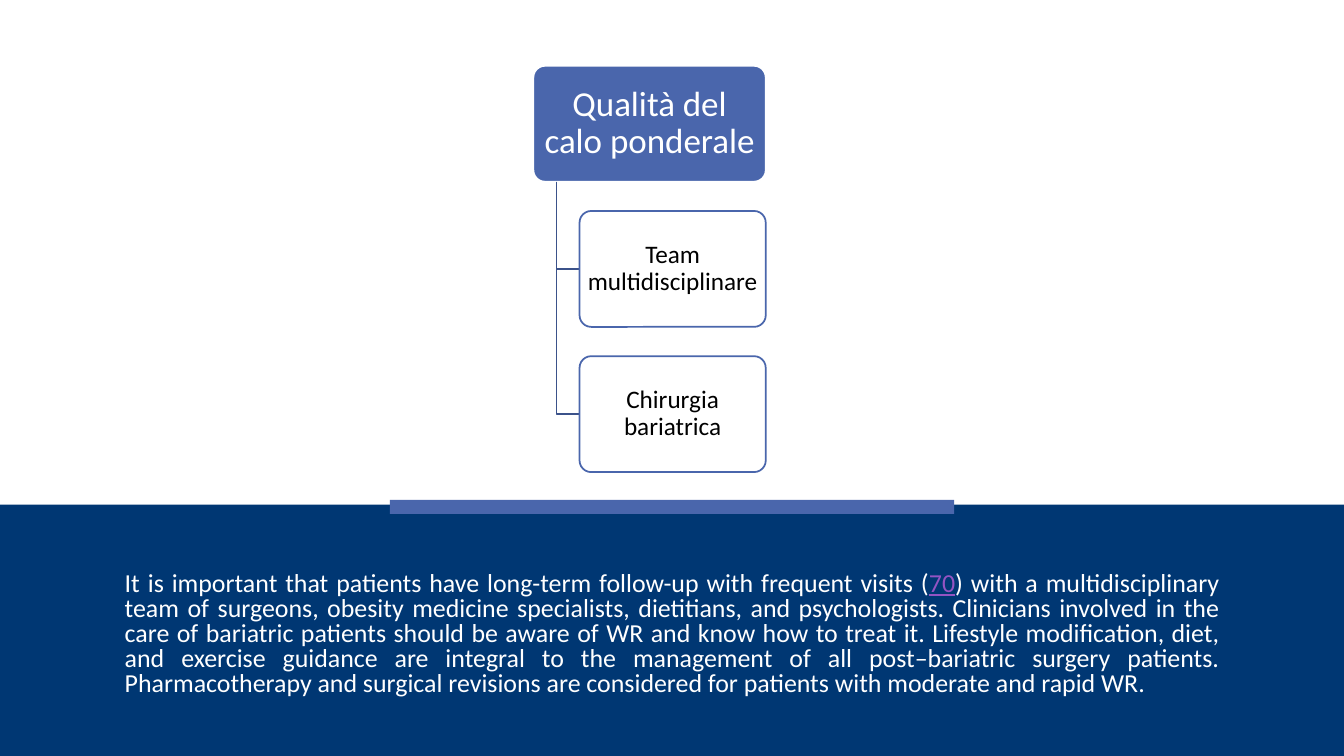
import dataclasses

import lxml.etree
import pptx
import pptx.dml.color
import pptx.enum.shapes
import pptx.enum.text
import pptx.oxml.ns
import pptx.util

Pt = pptx.util.Pt
Align = pptx.enum.text.PP_ALIGN
Shape = pptx.enum.shapes.MSO_SHAPE


@dataclasses.dataclass(frozen=True)
class Theme:
    font: str = "Calibri"
    white: str = "FFFFFF"
    black: str = "000000"
    navy: str = "003773"
    blue: str = "4A66AC"
    branch: str = "3B528A"
    citation: str = "9454C3"
    head_size: float = 25
    child_size: float = 18
    body_size: float = 18.5
    line_width: float = 1.25


def rgb(value):
    return pptx.dml.color.RGBColor.from_string(value)


def add_text(paragraph, text, *, font, size, color, underline=None):
    run = paragraph.add_run()
    run.text = text
    run.font.name = font
    run.font.size = Pt(size)
    run.font.color.rgb = rgb(color)
    run.font.underline = underline


class SlideBuilder:
    def __init__(self, slide, theme):
        self.slide = slide
        self.theme = theme

    def format_frame(self, shape, align, spacing, margin_x, margin_y, anchor):
        frame = shape.text_frame
        frame.word_wrap = True
        frame.margin_left = frame.margin_right = Pt(margin_x)
        frame.margin_top = frame.margin_bottom = Pt(margin_y)
        frame.vertical_anchor = anchor
        paragraph = frame.paragraphs[0]
        paragraph.alignment = align
        paragraph.line_spacing = spacing
        return paragraph

    def box(self, left, top, width, height, fill, line=None, kind=Shape.RECTANGLE):
        shape = self.slide.shapes.add_shape(
            kind, Pt(left), Pt(top), Pt(width), Pt(height))
        shape.shadow.inherit = False
        shape.fill.solid()
        shape.fill.fore_color.rgb = rgb(fill)
        if line:
            shape.line.color.rgb = rgb(line)
            shape.line.width = Pt(self.theme.line_width)
        else:
            shape.line.fill.background()
        return shape

    def node(self, left, top, width, height, text, *, fill, line, color, size, margin):
        shape = self.box(left, top, width, height, fill, line, Shape.ROUNDED_RECTANGLE)
        shape.adjustments[0] = 0.1
        paragraph = self.format_frame(
            shape, Align.CENTER, 0.9, margin, 2, pptx.enum.text.MSO_ANCHOR.MIDDLE)
        add_text(paragraph, text, font=self.theme.font, size=size, color=color)

    def elbow(self, left, top, right, bottom):
        builder = self.slide.shapes.build_freeform(Pt(left), Pt(top))
        builder.add_line_segments(
            [(Pt(left), Pt(bottom)), (Pt(right), Pt(bottom))], close=False)
        shape = builder.convert_to_shape()
        shape.shadow.inherit = False
        shape.fill.background()
        shape.line.color.rgb = rgb(self.theme.branch)
        shape.line.width = Pt(self.theme.line_width)

    def body(self, left, top, width, height, parts):
        shape = self.slide.shapes.add_textbox(
            Pt(left), Pt(top), Pt(width), Pt(height))
        paragraph = self.format_frame(
            shape, Align.JUSTIFY, 0.8, 7.2, 0, pptx.enum.text.MSO_ANCHOR.TOP)
        for text, text_format in parts:
            add_text(paragraph, text, font=self.theme.font,
                     size=self.theme.body_size, **text_format)


def main():
    presentation = pptx.Presentation()
    presentation.slide_width = Pt(960)
    presentation.slide_height = Pt(540)
    theme = Theme()
    slide = presentation.slides.add_slide(presentation.slide_layouts[6])
    builder = SlideBuilder(slide, theme)

    # Lower band and accent bar
    builder.box(0, 360.5, 960, 179.5, theme.navy)
    builder.box(278.5, 357, 403, 10, theme.blue)

    # Closing paragraph with its citation
    plain = {"color": theme.white}
    builder.body(82, 409, 796, 123, [
        ("It is important that patients have long-term follow-up with frequent "
         "visits (", plain),
        ("70", {"color": theme.citation, "underline": True}),
        (") with a multidisciplinary team of surgeons, obesity medicine "
         "specialists, dietitians, and psychologists. Clinicians involved in the "
         "care of bariatric patients should be aware of WR and know how to treat "
         "it. Lifestyle modification, diet, and exercise guidance are integral to "
         "the management of all post–bariatric surgery patients. Pharmacotherapy "
         "and surgical revisions are considered for patients with moderate and "
         "rapid WR.", plain),
    ])

    # Hierarchy: head node, then evenly spaced children on one trunk
    head_left, head_top, head_width, node_height = 381, 47, 166, 82.8
    child_left, child_width, step = 414, 133, 103.7
    trunk = head_left + head_width / 10
    builder.node(head_left, head_top, head_width, node_height,
                 "Qualità del calo ponderale", fill=theme.blue, line=theme.white,
                 color=theme.white, size=theme.head_size, margin=3)
    for index, label in enumerate(["Team multidisciplinare", "Chirurgia bariatrica"], 1):
        top = head_top + index * step
        builder.elbow(trunk, head_top + node_height, child_left, top + node_height / 2)
        builder.node(child_left, top, child_width, node_height, label,
                     fill=theme.white, line=theme.blue, color=theme.black,
                     size=theme.child_size, margin=2)

    presentation.save("out.pptx")


if __name__ == "__main__":
    main()
